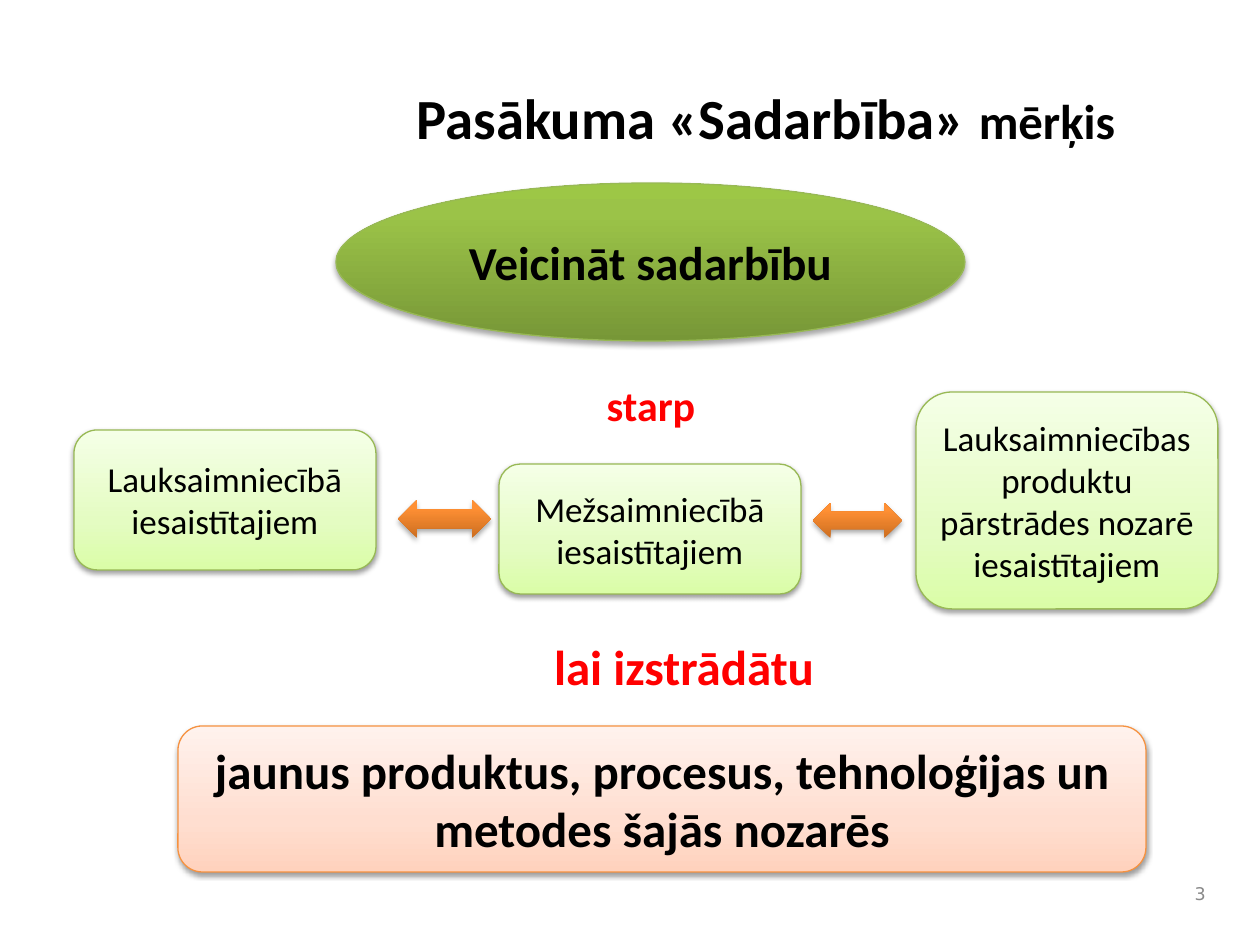
from lxml import etree
from pptx import Presentation
from pptx.dml.color import RGBColor
from pptx.enum.shapes import MSO_SHAPE
from pptx.enum.text import MSO_ANCHOR, MSO_AUTO_SIZE, PP_ALIGN
from pptx.oxml import parse_xml
from pptx.oxml.ns import nsdecls, qn
from pptx.util import Emu, Pt

ELLIPSE, ROUND, ARROW = MSO_SHAPE.OVAL, MSO_SHAPE.ROUNDED_RECTANGLE, MSO_SHAPE.LEFT_RIGHT_ARROW
TOP, MIDDLE = MSO_ANCHOR.TOP, MSO_ANCHOR.MIDDLE
CENTER, RIGHT = PP_ALIGN.CENTER, PP_ALIGN.RIGHT
NO_FIT = MSO_AUTO_SIZE.NONE

PX = 914400 / 126
BLACK, RED, GREY = "000000", "FF0000", "898989"

# Gradient stops run from the bottom up; shadow is (opacity %, distance pt)
STYLES = {
    "aim": dict(stops=[(0, "779737"), (80, "9BC348"), (100, "9DC746")],
                line="98B955", shadow=(35, 1.8)),
    "arrow": dict(stops=[(0, "CC6E20"), (80, "FF9034"), (100, "FF9136")],
                  line=None, shadow=(35, 1.8)),
    "partner": dict(stops=[(0, "DAFDA7"), (35, "E4FCC2"), (100, "F5FFE7")],
                    line="98B955", shadow=(38, 1.6)),
    "result": dict(stops=[(0, "FFD2BD"), (35, "FFDED0"), (100, "FFF2ED")],
                   line="F69240", shadow=(38, 1.6)),
}

TITLE_BOX = (346, 68, 840, 97)
TITLE = [("Pasākuma «Sadarbība» ", 32.4), ("mērķis", 27.9)]
NUMBER_BOX = (1176, 872, 42, 42)

# text, box, size
LABELS = [
    ("starp", (576, 373, 150, 63), 24),
    ("lai izstrādātu", (529, 630, 310, 72), 28),
]
# style, preset, box, paragraphs, size, bold
SHAPES = [
    ("aim", ELLIPSE, (336, 183, 629, 158), ["Veicināt sadarbību"], 27, True),
    ("arrow", ARROW, (398, 500, 93, 38), [], 20, False),
    ("arrow", ARROW, (813, 503, 89, 35), [], 20, False),
    ("partner", ROUND, (74, 430, 302, 140),
     ["Lauksaimniecībā", "iesaistītajiem"], 20, False),
    ("partner", ROUND, (499, 464, 302, 130),
     ["Mežsaimniecībā iesaistītajiem"], 20, False),
    ("partner", ROUND, (916, 392, 302, 217),
     ["Lauksaimniecības produktu pārstrādes nozarē iesaistītajiem"], 20, False),
    ("result", ROUND, (178, 726, 968, 146),
     ["jaunus produktus, procesus, tehnoloģijas un metodes šajās nozarēs"], 28, True),
]


def rgb(value):
    return RGBColor.from_string(value)


def emu(box):
    return [Emu(round(v * PX)) for v in box]


def format_font(font, size, color=BLACK, bold=False, name="Calibri"):
    values = dict(name=name, size=Pt(size), bold=bold)
    for key, value in values.items():
        setattr(font, key, value)
    font.color.rgb = rgb(color)


def format_frame(tf, anchor):
    for key, value in dict(word_wrap=True, auto_size=NO_FIT, vertical_anchor=anchor).items():
        setattr(tf, key, value)


def write(tf, paragraphs, size, color, bold, anchor):
    format_frame(tf, anchor)
    for i, text in enumerate(paragraphs):
        p = tf.add_paragraph() if i else tf.paragraphs[0]
        p.alignment = CENTER
        r = p.add_run()
        r.text = text
        format_font(r.font, size, color, bold)


def apply_style(sp, stops, line, shadow):
    sp.fill.gradient()
    sp.fill.gradient_angle = 90
    gs_list = sp._element.spPr.find(qn("a:gradFill")).find(qn("a:gsLst"))
    for old in list(gs_list):
        gs_list.remove(old)
    for position, color in stops:
        gs = etree.SubElement(gs_list, qn("a:gs"), pos=str(position * 1000))
        etree.SubElement(gs, qn("a:srgbClr"), val=color)

    if line:
        sp.line.color.rgb = rgb(line)
        sp.line.width = Pt(0.75)
    else:
        sp.line.fill.background()

    opacity, distance = shadow
    sp.shadow.inherit = False
    sp._element.spPr.find(qn("a:effectLst")).append(parse_xml(
        f'<a:outerShdw {nsdecls("a")} blurRad="{Pt(3.1)}" dist="{Pt(distance)}" '
        f'dir="5400000" rotWithShape="0"><a:srgbClr val="{BLACK}">'
        f'<a:alpha val="{opacity * 1000}"/></a:srgbClr></a:outerShdw>'))


def add_title(slide):
    sp = slide.shapes.title
    sp.left, sp.top, sp.width, sp.height = emu(TITLE_BOX)
    format_frame(sp.text_frame, MIDDLE)
    p = sp.text_frame.paragraphs[0]
    p.alignment = CENTER
    for text, size in TITLE:
        r = p.add_run()
        r.text = text
        format_font(r.font, size, bold=True)


def add_slide_number(slide):
    tf = slide.shapes.add_textbox(*emu(NUMBER_BOX)).text_frame
    format_frame(tf, MIDDLE)
    p = tf.paragraphs[0]
    p.alignment = RIGHT
    r = p.add_run()
    r.text = "3"
    format_font(r.font, 10, GREY, name="DejaVu Sans")


def main():
    prs = Presentation()
    prs.slide_width, prs.slide_height = emu((1260, 945))
    slide = prs.slides.add_slide(prs.slide_layouts[5])
    add_title(slide)
    add_slide_number(slide)
    for text, box, size in LABELS:
        sp = slide.shapes.add_textbox(*emu(box))
        write(sp.text_frame, [text], size, RED, True, TOP)
    for style, preset, box, paragraphs, size, bold in SHAPES:
        sp = slide.shapes.add_shape(preset, *emu(box))
        apply_style(sp, **STYLES[style])
        write(sp.text_frame, paragraphs, size, BLACK, bold, MIDDLE)
    prs.save("out.pptx")


if __name__ == "__main__":
    main()
